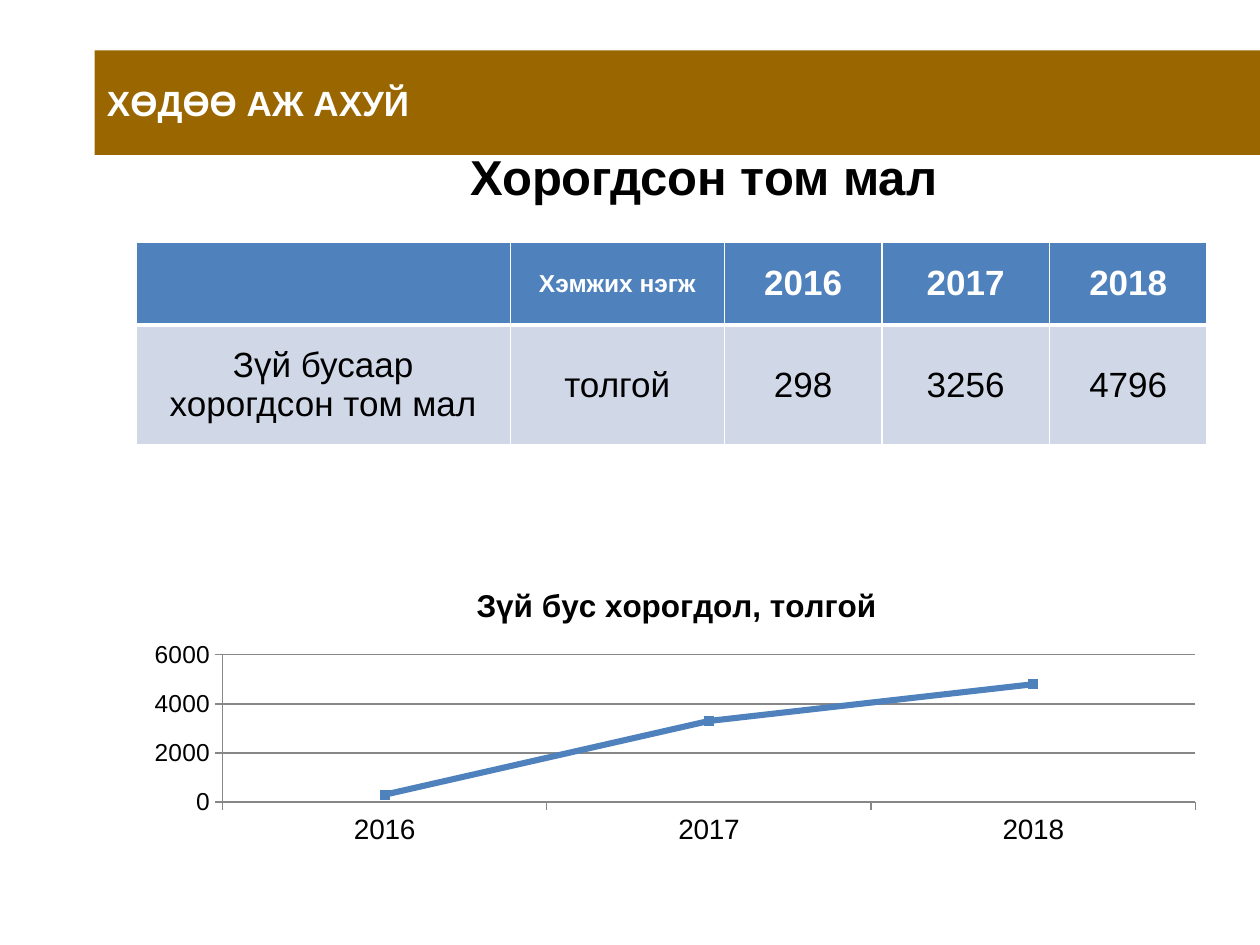
from dataclasses import dataclass

from lxml import etree
from pptx import Presentation
from pptx.chart.data import CategoryChartData
from pptx.dml.color import RGBColor
from pptx.enum.chart import XL_CHART_TYPE, XL_MARKER_STYLE, XL_TICK_MARK
from pptx.enum.shapes import MSO_SHAPE
from pptx.enum.text import MSO_ANCHOR, PP_ALIGN
from pptx.oxml.ns import qn
from pptx.util import Inches, Pt

RECT = MSO_SHAPE.RECTANGLE
MIDDLE = MSO_ANCHOR.MIDDLE
CENTER, LEFT = PP_ALIGN.CENTER, PP_ALIGN.LEFT
LINE_CHART = XL_CHART_TYPE.LINE_MARKERS_STACKED
SQUARE = XL_MARKER_STYLE.SQUARE
OUTSIDE = XL_TICK_MARK.OUTSIDE


@dataclass(frozen=True)
class Theme:
    font: str = "Arial"
    chart_font: str = "Calibri"
    brown: str = "996600"
    blue: str = "4F81BD"
    pale: str = "D0D8E8"
    gray: str = "878787"
    white: str = "FFFFFF"
    black: str = "000000"
    heading: int = 28
    body: int = 20
    chart_title: int = 18
    category: int = 16
    small: int = 14


THEME = Theme()
YEARS = ["2016", "2017", "2018"]


def rgb(color):
    return RGBColor.from_string(color)


def set_font(font, size, color, bold=False, name=THEME.font):
    font.name, font.size, font.bold = name, Pt(size), bold
    font.color.rgb = rgb(color)


def add_text(tf, text, size, color, bold=False, align=CENTER):
    p = tf.paragraphs[0]
    p.alignment = align
    r = p.add_run()
    r.text = text
    set_font(r.font, size, color, bold)


def set_border(cell, side, color=None, width=1):
    tc_pr = cell._tc.get_or_add_tcPr()
    ln = etree.Element(qn(f"a:{side}"), w=str(Pt(width)))
    if color:
        fill = etree.SubElement(ln, qn("a:solidFill"))
        etree.SubElement(fill, qn("a:srgbClr"), val=color)
    else:
        etree.SubElement(ln, qn("a:noFill"))
    tc_pr.insert(["lnL", "lnR", "lnT", "lnB"].index(side), ln)


def add_grid(s, left, top, widths, heights):
    shape = s.shapes.add_table(len(heights), len(widths), Inches(left), Inches(top),
                               Inches(sum(widths)), Inches(sum(heights)))
    table = shape.table
    table.horz_banding = False
    for col, width in zip(table.columns, widths):
        col.width = Inches(width)
    for row, height in zip(table.rows, heights):
        row.height = Inches(height)
    return table


def add_banner(s, left, top, width, height):
    sp = s.shapes.add_shape(RECT, Inches(left), Inches(top), Inches(width), Inches(height))
    sp.shadow.inherit = False
    sp.fill.solid()
    sp.fill.fore_color.rgb = rgb(THEME.brown)
    sp.line.fill.background()
    tf = sp.text_frame
    tf.word_wrap = True
    tf.vertical_anchor = MIDDLE
    add_text(tf, "ХӨДӨӨ АЖ АХУЙ", THEME.body, THEME.white, True, LEFT)


def add_heading(s, left, top, width, height):
    table = add_grid(s, left, top, [width], [height])
    table.first_row = False
    cell = table.cell(0, 0)
    cell.fill.background()
    cell.vertical_anchor = MIDDLE
    cell.margin_left = cell.margin_right = cell.margin_top = cell.margin_bottom = 0
    for side in ("lnL", "lnR", "lnT", "lnB"):
        set_border(cell, side)
    add_text(cell.text_frame, "Хорогдсон том мал", THEME.heading, THEME.black, True)


def add_losses_table(s, left, top, widths, heights):
    rows = [["", "Хэмжих нэгж", *YEARS],
            ["Зүй бусаар хорогдсон том мал", "толгой", "298", "3256", "4796"]]
    table = add_grid(s, left, top, widths, heights)
    for i, row in enumerate(rows):
        head = i == 0
        for j, text in enumerate(row):
            cell = table.cell(i, j)
            cell.fill.solid()
            cell.fill.fore_color.rgb = rgb(THEME.blue if head else THEME.pale)
            cell.vertical_anchor = MIDDLE
            for side in ("lnL", "lnR", "lnT", "lnB"):
                seam = side == ("lnB" if head else "lnT")
                set_border(cell, side, THEME.white, 3 if seam else 1)
            if text:
                size = THEME.small if head and j == 1 else THEME.body
                add_text(cell.text_frame, text, size,
                         THEME.white if head else THEME.black, head)


def set_plot_layout(chart, x, y, w, h):
    plot_area = chart._chartSpace.chart.plotArea
    for old in plot_area.findall(qn("c:layout")):
        plot_area.remove(old)
    layout = etree.Element(qn("c:layout"))
    manual = etree.SubElement(layout, qn("c:manualLayout"))
    values = {"layoutTarget": "inner", "xMode": "edge", "yMode": "edge",
              "x": x, "y": y, "w": w, "h": h}
    for tag, value in values.items():
        etree.SubElement(manual, qn(f"c:{tag}"), val=str(value))
    plot_area.insert(0, layout)


def add_losses_chart(s, left, top, width, height):
    data = CategoryChartData()
    data.categories = YEARS
    data.add_series("Series 1", [300, 3300, 4800])
    chart = s.shapes.add_chart(LINE_CHART, Inches(left), Inches(top),
                               Inches(width), Inches(height), data).chart
    set_font(chart.font, THEME.chart_title, THEME.black, name=THEME.chart_font)
    chart.has_legend = False
    chart.has_title = True
    add_text(chart.chart_title.text_frame, "Зүй бус хорогдол, толгой",
             THEME.chart_title, THEME.black, True)
    chart.chart_title.include_in_layout = False
    set_plot_layout(chart, 0.08, 0.31, 0.9, 0.52)

    value_axis = chart.value_axis
    value_axis.minimum_scale, value_axis.maximum_scale = 0, 6000
    value_axis.major_unit = 2000
    value_axis.has_major_gridlines = True
    value_axis.major_gridlines.format.line.color.rgb = rgb(THEME.gray)
    for axis, size in ((chart.category_axis, THEME.category), (value_axis, THEME.small)):
        set_font(axis.tick_labels.font, size, THEME.black)
        axis.major_tick_mark = OUTSIDE
        axis.format.line.color.rgb = rgb(THEME.gray)

    plot = chart.plots[0]
    plot.vary_by_categories = False
    series = plot.series[0]
    series.smooth = False
    series.format.line.color.rgb = rgb(THEME.blue)
    series.format.line.width = Pt(3.5)
    marker = series.marker
    marker.style, marker.size = SQUARE, 5
    marker.format.fill.solid()
    marker.format.fill.fore_color.rgb = rgb(THEME.blue)
    marker.format.line.color.rgb = rgb(THEME.blue)


def main():
    prs = Presentation()
    prs.slide_width, prs.slide_height = Inches(10), Inches(7.5)
    s = prs.slides.add_slide(prs.slide_layouts[6])
    add_losses_table(s, 1.08, 1.92, [2.97, 1.7, 1.25, 1.33, 1.25], [0.66, 0.95])
    add_banner(s, 0.75, 0.4, 9.25, 0.83)
    add_heading(s, 3.25, 1.08, 4.67, 0.67)
    add_losses_chart(s, 1.08, 4.5, 8.58, 2.25)
    prs.save("out.pptx")


if __name__ == "__main__":
    main()
